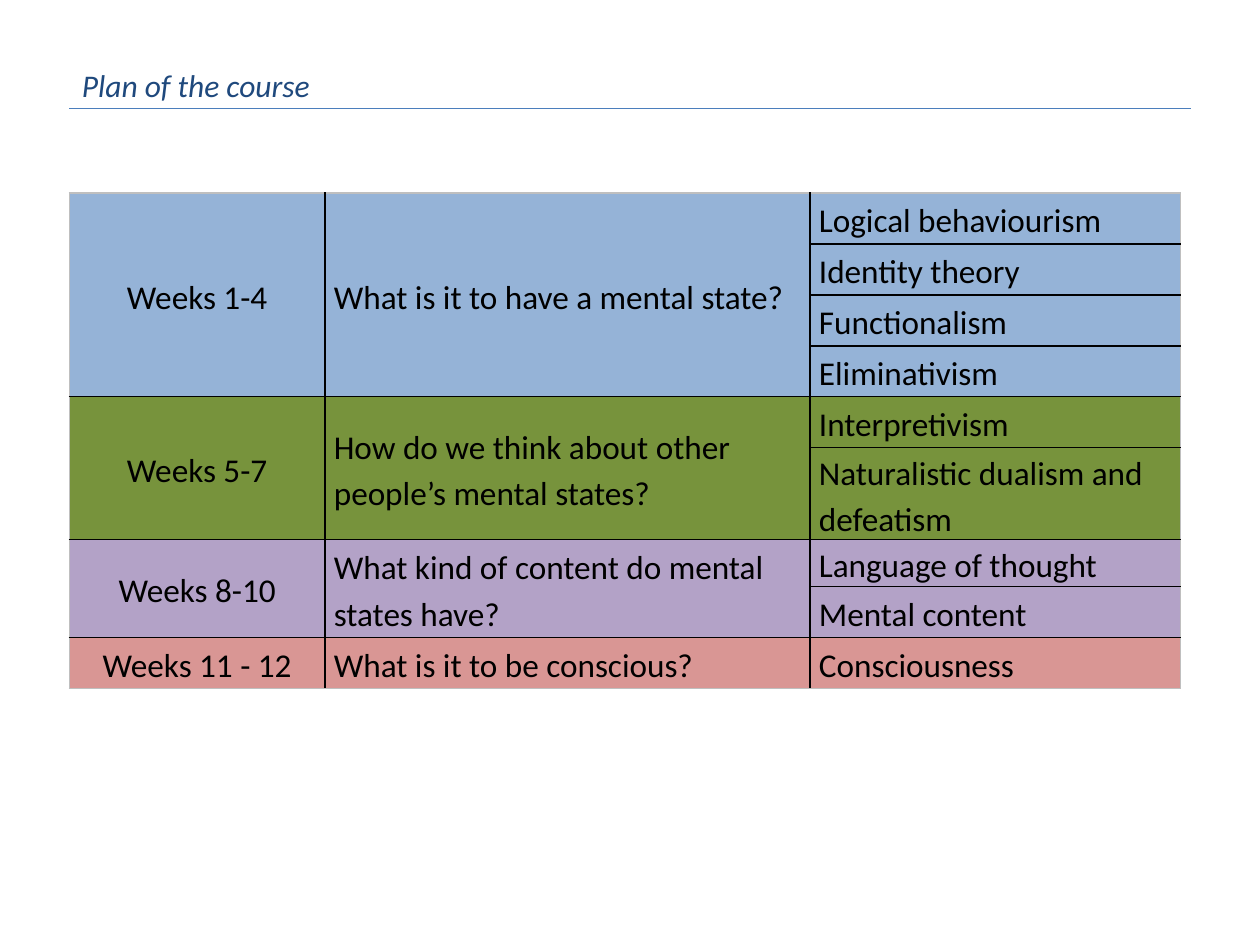
from dataclasses import dataclass

from lxml import etree
from pptx import Presentation
from pptx import util as u
from pptx.dml.color import RGBColor
from pptx.enum import shapes, text
from pptx.oxml import ns

BLACK = RGBColor(0x00, 0x00, 0x00)
NAVY = RGBColor(0x1F, 0x49, 0x7D)
RULE = RGBColor(0x4B, 0x7E, 0xBC)
EDGE = RGBColor(0xBF, 0xBF, 0xBF)
BLUE = RGBColor(0x95, 0xB3, 0xD7)
GREEN = RGBColor(0x77, 0x93, 0x3C)
MAUVE = RGBColor(0xB3, 0xA2, 0xC7)
ROSE = RGBColor(0xD9, 0x96, 0x94)

FONT = "Calibri"
LEFT = u.Inches(0.55)
COLS = [u.Inches(w) for w in (2.03, 3.85, 2.94)]
ROW = u.Inches(1.62) // 4
TALL = {5: u.Inches(0.73), 6: u.Inches(0.37)}  # rows unlike the rest


@dataclass
class Block:
    weeks: str
    theme: str
    topics: list[str]
    fill: RGBColor


PLAN = [
    Block("Weeks 1-4", "What is it to have a mental state?",
          ["Logical behaviourism", "Identity theory", "Functionalism", "Eliminativism"], BLUE),
    Block("Weeks 5-7", "How do we think about other people’s mental states?",
          ["Interpretivism", "Naturalistic dualism and defeatism"], GREEN),
    Block("Weeks 8-10", "What kind of content do mental states have?",
          ["Language of thought", "Mental content"], MAUVE),
    Block("Weeks 11 - 12", "What is it to be conscious?", ["Consciousness"], ROSE),
]


def add_run(para, words: str, size: float, hue: RGBColor, slant: bool = False) -> None:
    run = para.add_run()
    run.text = words
    run.font.name, run.font.size = FONT, u.Pt(size)
    run.font.italic = slant
    run.font.color.rgb = hue


def add_title(slide, words: str) -> None:
    title = slide.shapes.title
    title.left, title.top = LEFT, u.Inches(0.47)
    title.width, title.height = u.Inches(2.03), u.Inches(0.4)
    frame = title.text_frame
    frame.word_wrap = False
    frame.auto_size = text.MSO_AUTO_SIZE.SHAPE_TO_FIT_TEXT
    frame.vertical_anchor = text.MSO_ANCHOR.TOP
    para = frame.paragraphs[0]
    para.alignment = text.PP_ALIGN.LEFT
    add_run(para, words, 18, NAVY, True)


def add_rule(slide) -> None:
    y = u.Inches(0.86)
    line = slide.shapes.add_connector(
        shapes.MSO_CONNECTOR.STRAIGHT, LEFT, y, u.Inches(9.45), y)
    line.line.color.rgb = RULE
    line.line.width = u.Pt(0.75)
    etree.SubElement(line._element.spPr, ns.qn("a:effectLst"))


def set_edges(cell, hues: dict[str, RGBColor]) -> None:
    """Draw the cell's borders; they come before the fill in the XML."""
    props = cell._tc.get_or_add_tcPr()
    for spot, (side, hue) in enumerate(hues.items()):
        line = etree.Element(ns.qn(f"a:ln{side}"), w=str(u.Pt(1)))
        fill = etree.SubElement(line, ns.qn("a:solidFill"))
        etree.SubElement(fill, ns.qn("a:srgbClr"), val=str(hue))
        props.insert(spot, line)


def fill_cell(cell, words: str, mid: bool) -> None:
    para = cell.text_frame.paragraphs[0]
    para.alignment = text.PP_ALIGN.CENTER if mid else text.PP_ALIGN.LEFT
    para.line_spacing = 1.15
    add_run(para, words, 19, BLACK)


def add_plan(slide, plan: list[Block]) -> None:
    count = sum(len(block.topics) for block in plan)
    highs = [TALL.get(r, ROW) for r in range(count)]
    table = slide.shapes.add_table(
        count, len(COLS), LEFT, u.Inches(1.53), sum(COLS), sum(highs)).table
    table.first_row = table.horz_banding = False
    for col, wide in zip(table.columns, COLS):
        col.width = wide
    for row, high in zip(table.rows, highs):
        row.height = high

    top = 0
    for block in plan:
        last = top + len(block.topics) - 1
        # Fill and borders of every cell in the block
        for r in range(top, last + 1):
            for c in range(len(COLS)):
                cell = table.cell(r, c)
                cell.fill.solid()
                cell.fill.fore_color.rgb = block.fill
                cell.vertical_anchor = text.MSO_ANCHOR.MIDDLE
                cell.margin_left = cell.margin_right = u.Inches(0.07)
                cell.margin_top = cell.margin_bottom = 0
                outer = {"L": c == 0, "R": c == len(COLS) - 1,
                         "T": r == 0, "B": r == count - 1}
                set_edges(cell, {s: EDGE if out else BLACK for s, out in outer.items()})
        # Weeks and theme span the topics
        for c, words in enumerate((block.weeks, block.theme)):
            if last > top:
                table.cell(top, c).merge(table.cell(last, c))
            fill_cell(table.cell(top, c), words, c == 0)
        for r, topic in enumerate(block.topics, top):
            fill_cell(table.cell(r, 2), topic, False)
        top = last + 1


def main() -> None:
    deck = Presentation()
    deck.slide_width, deck.slide_height = u.Inches(10), u.Inches(7.5)
    slide = deck.slides.add_slide(deck.slide_layouts[5])
    add_title(slide, "Plan of the course")
    add_rule(slide)
    add_plan(slide, PLAN)
    deck.save("out.pptx")


if __name__ == "__main__":
    main()
